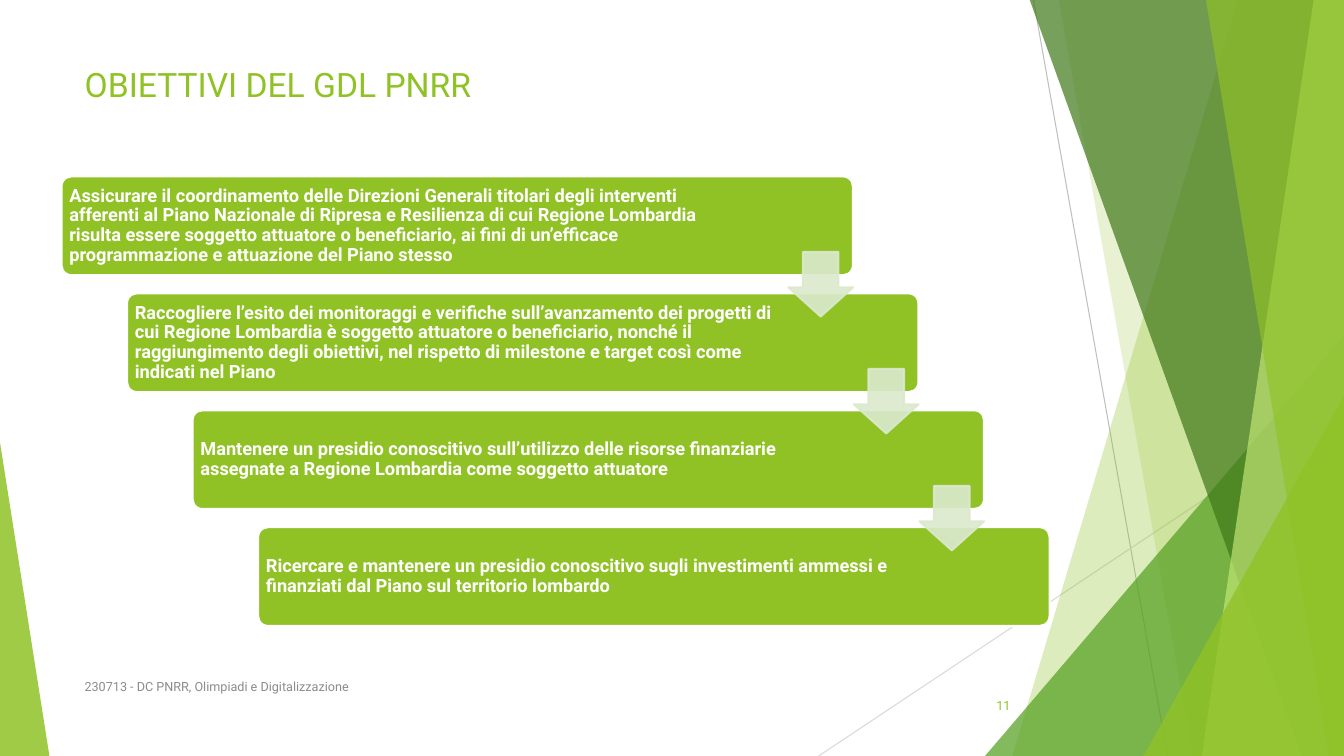
from lxml import etree
from pptx import Presentation
from pptx.dml.color import RGBColor
from pptx.enum.shapes import MSO_CONNECTOR, MSO_SHAPE
from pptx.enum.text import MSO_ANCHOR, MSO_AUTO_SIZE, PP_ALIGN
from pptx.oxml.ns import qn
from pptx.util import Inches, Pt

STRAIGHT = MSO_CONNECTOR.STRAIGHT
TRIANGLE = MSO_SHAPE.ISOSCELES_TRIANGLE
CARD = MSO_SHAPE.ROUNDED_RECTANGLE
ARROW = MSO_SHAPE.DOWN_ARROW
MIDDLE, TOP = MSO_ANCHOR.MIDDLE, MSO_ANCHOR.TOP
LEFT, RIGHT = PP_ALIGN.LEFT, PP_ALIGN.RIGHT

COLORS = {
    "green": "90C226", "leaf": "54A021", "forest": "3F7819", "lime": "C0E474",
    "pale": "DBE9CD", "white": "FFFFFF", "gray": "8C8C8C",
    "steel": "BFBFBF", "silver": "D9D9D9",
}
FONT = "Roboto"
WIDTH, HEIGHT = 13.33, 7.5

TITLE = "OBIETTIVI DEL GDL PNRR"
FOOTER = "230713 - DC PNRR, Olimpiadi e Digitalizzazione"
PAGE_NUMBER = "11"
GOALS = [
    "Assicurare il coordinamento delle Direzioni Generali titolari degli interventi afferenti al Piano Nazionale di Ripresa e Resilienza di cui Regione Lombardia risulta essere soggetto attuatore o beneficiario, ai fini di un’efficace programmazione e attuazione del Piano stesso",
    "Raccogliere l’esito dei monitoraggi e verifiche sull’avanzamento dei progetti di cui Regione Lombardia è soggetto attuatore o beneficiario, nonché il raggiungimento degli obiettivi, nel rispetto di milestone e target così come indicati nel Piano",
    "Mantenere un presidio conoscitivo sull’utilizzo delle risorse finanziarie assegnate a Regione Lombardia come soggetto attuatore",
    "Ricercare e mantenere un presidio conoscitivo sugli investimenti ammessi e finanziati dal Piano sul territorio lombardo",
]

RULES = [
    ((10.25, 0, 11.58, HEIGHT), "steel"),
    ((WIDTH, 4.03, 8.12, HEIGHT), "silver"),
]
BACK_FACETS = [(12.28, 10.04, "green", 30), (10.5, 11.83, "green", 20)]
FRONT_FACETS = [
    (10.21, 12.91, "forest", 70),
    (13.03, 11.92, "lime", 70),
    (11.96, 13.18, "green", 65),
]
BACK_TRIANGLES = [((9.77, 3.33, 3.56, 4.17), 1, "leaf", 72)]
FRONT_TRIANGLES = [
    ((11.34, 3.93, 1.99, 3.57), 1, "green", 80),
    ((0, 4.39, 0.49, 3.11), 0, "green", 85),
]

CARD_LEFT, CARD_TOP, CARD_WIDTH, CARD_HEIGHT = 0.61, 1.75, 7.85, 0.98
STEP_X, STEP_Y = 0.65, 1.16
ARROW_SIZE, ARROW_DROP = 0.64, 0.75


def rgb(name):
    return RGBColor.from_string(COLORS[name])


def set_alpha(fill_parent, percent):
    color = fill_parent.find(qn("a:solidFill")).find(qn("a:srgbClr"))
    etree.SubElement(color, qn("a:alpha")).set("val", str(percent * 1000))


def paint(shape, color, alpha=100, line=None):
    shape.shadow.inherit = False
    shape.fill.solid()
    shape.fill.fore_color.rgb = rgb(color)
    if line:
        shape.line.color.rgb = rgb(line)
        shape.line.width = Pt(1.5)
    else:
        shape.line.fill.background()
    if alpha < 100:
        properties = shape._element.spPr
        set_alpha(properties, alpha)
        if line:
            set_alpha(properties.find(qn("a:ln")), alpha)


def add_preset(page, kind, box, adjustments):
    shape = page.shapes.add_shape(kind, *map(Inches, box))
    for index, value in enumerate(adjustments):
        shape.adjustments[index] = value
    return shape


def add_rule(page, ends, color):
    rule = page.shapes.add_connector(STRAIGHT, *map(Inches, ends))
    rule.line.color.rgb = rgb(color)
    rule.line.width = Pt(0.75)
    etree.SubElement(rule._element.spPr, qn("a:effectLst"))


def add_facet(page, top_x, bottom_x, color, alpha):
    corners = [(top_x, -0.01), (WIDTH, -0.01), (WIDTH, HEIGHT), (bottom_x, HEIGHT)]
    points = [(Inches(x), Inches(y)) for x, y in corners]
    builder = page.shapes.build_freeform(*points[0])
    builder.add_line_segments(points[1:], close=True)
    paint(builder.convert_to_shape(), color, alpha)


def add_triangle(page, box, apex, color, alpha):
    paint(add_preset(page, TRIANGLE, box, [apex]), color, alpha)


def write(shape, text, size, color, bold=False, align=LEFT, spacing=1.0, **frame_format):
    frame = shape.text_frame
    values = {"word_wrap": True, "auto_size": MSO_AUTO_SIZE.NONE,
              "vertical_anchor": MIDDLE, **frame_format}
    for name, value in values.items():
        setattr(frame, name, value)
    para = frame.paragraphs[0]
    para.alignment, para.line_spacing = align, spacing
    span = para.add_run()
    span.text = text
    for name, value in {"name": FONT, "size": Pt(size), "bold": bold}.items():
        setattr(span.font, name, value)
    span.font.color.rgb = rgb(color)


def add_backdrop(page):
    for rule in RULES:
        add_rule(page, *rule)
    for facets, triangles in ((BACK_FACETS, BACK_TRIANGLES), (FRONT_FACETS, FRONT_TRIANGLES)):
        for facet in facets:
            add_facet(page, *facet)
        for triangle in triangles:
            add_triangle(page, *triangle)


def add_labels(page):
    title = page.shapes.title
    places = {"left": 0.74, "top": 0.58, "width": 8, "height": 0.5}
    for name, value in places.items():
        setattr(title, name, Inches(value))
    write(title, TITLE, 24, "green", vertical_anchor=TOP)
    number = page.shapes.add_textbox(*map(Inches, (9.37, 6.8, 0.75, 0.4)))
    write(number, PAGE_NUMBER, 9, "green", align=RIGHT)
    footer = page.shapes.add_textbox(*map(Inches, (0.74, 6.61, 6.89, 0.4)))
    write(footer, FOOTER, 9, "gray")


def add_cascade(page):
    corners = [(CARD_LEFT + i * STEP_X, CARD_TOP + i * STEP_Y) for i in range(len(GOALS))]
    insets = {"margin_left": Inches(0.05), "margin_right": Inches(1.35),
              "margin_top": Inches(0.05), "margin_bottom": Inches(0.05)}
    for (left, top), goal in zip(corners, GOALS):
        card = add_preset(page, CARD, (left, top, CARD_WIDTH, CARD_HEIGHT), [0.1])
        paint(card, "green", line="white")
        write(card, goal, 13, "white", bold=True, spacing=0.9, **insets)
    for left, top in corners[:-1]:
        box = (left + CARD_WIDTH - ARROW_SIZE, top + ARROW_DROP, ARROW_SIZE, ARROW_SIZE)
        paint(add_preset(page, ARROW, box, [0.55, 0.45]), "pale", 90, "pale")


def main():
    deck = Presentation()
    deck.slide_width, deck.slide_height = Inches(WIDTH), Inches(HEIGHT)
    page = deck.slides.add_slide(deck.slide_layouts[5])
    add_backdrop(page)
    add_labels(page)
    add_cascade(page)
    deck.save("out.pptx")


if __name__ == "__main__":
    main()
